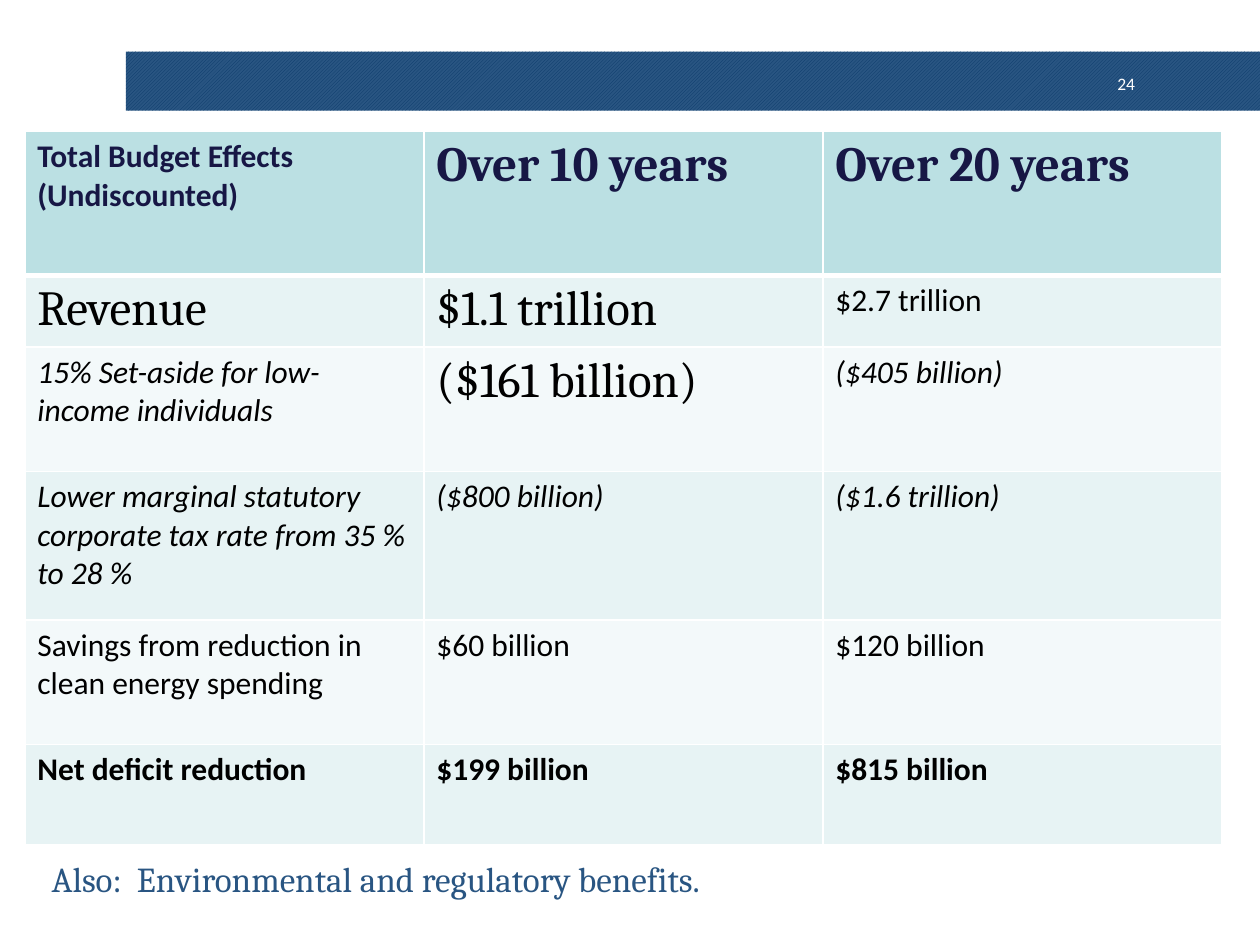
import pptx
import pptx.util
import pptx.dml.color
import pptx.enum.dml
import pptx.enum.shapes
import pptx.enum.text
import pptx.oxml
import pptx.oxml.ns

Cm = pptx.util.Cm
Pt = pptx.util.Pt
RGB = pptx.dml.color.RGBColor
ALIGN = pptx.enum.text.PP_ALIGN

WHITE = RGB(0xFF, 0xFF, 0xFF)
BLACK = RGB(0, 0, 0)
NAVY = RGB(0x17, 0x17, 0x45)
BLUE = RGB(0x29, 0x55, 0x82)
DEEP = RGB(0x08, 0x38, 0x68)
HEAD = RGB(0xBB, 0xE0, 0xE3)
BANDS = [RGB(0xF3, 0xF9, 0xFA), RGB(0xE7, 0xF3, 0xF4)]

ROWS = [
    ("Total Budget Effects (Undiscounted)", "Over 10 years", "Over 20 years"),
    ("Revenue", "$1.1 trillion", "$2.7 trillion"),
    ("15% Set-aside for low-income individuals", "($161 billion)", "($405 billion)"),
    ("Lower marginal statutory corporate tax rate from 35 % to 28 %",
     "($800 billion)", "($1.6 trillion)"),
    ("Savings from reduction in clean energy spending", "$60 billion", "$120 billion"),
    ("Net deficit reduction", "$199 billion", "$815 billion"),
]
HEIGHTS = [2.9, 1.17, 2.51, 3, 2.51, 2.03]
LARGE = {(0, 1), (0, 2), (1, 0), (1, 1), (2, 1)}
BOLD = {0, 5}
ITALIC = {2, 3}
NOTE = "Also:  Environmental and regulatory benefits."
PAGE = "24"


def style(frame, face, size, color, bold=False, italic=False):
    for run in frame.paragraphs[0].runs:
        font = run.font
        font.name, font.size = face, Pt(size)
        font.bold, font.italic = bold, italic
        font.color.rgb = color


def border(cell, widths):
    props = cell._tc.get_or_add_tcPr()
    for spot, (side, width) in enumerate(zip("LRTB", widths)):
        line = pptx.oxml.parse_xml(
            f'<a:ln{side} {pptx.oxml.ns.nsdecls("a")} w="{Pt(width)}">'
            f'<a:solidFill><a:srgbClr val="{WHITE}"/></a:solidFill></a:ln{side}>')
        props.insert(spot, line)


def label(slide, text, place, wrap):
    box = slide.shapes.add_textbox(*[Cm(x) for x in place])
    frame = box.text_frame
    frame.text = text
    frame.word_wrap = wrap
    frame.auto_size = pptx.enum.text.MSO_AUTO_SIZE.SHAPE_TO_FIT_TEXT
    return frame


def banner(slide):
    bar = slide.shapes.add_shape(pptx.enum.shapes.MSO_SHAPE.RECTANGLE,
                                 Cm(2.54), Cm(1.04), Cm(22.86), Cm(1.19))
    bar.shadow.inherit = False
    bar.line.fill.background()
    bar.fill.patterned()
    bar.fill.pattern = pptx.enum.dml.MSO_PATTERN.LIGHT_UPWARD_DIAGONAL
    bar.fill.fore_color.rgb = DEEP
    bar.fill.back_color.rgb = BLUE
    frame = label(slide, PAGE, (22.02, 1.37, 1.04, 0.58), True)
    frame.margin_left = frame.margin_right = Cm(0.18)
    frame.margin_top = frame.margin_bottom = Cm(0.1)
    frame.paragraphs[0].alignment = ALIGN.RIGHT
    style(frame, "Calibri", 10, WHITE)


def budget(slide):
    table = slide.shapes.add_table(len(ROWS), len(ROWS[0]), Cm(0.5), Cm(2.65),
                                   Cm(24.13), Cm(sum(HEIGHTS))).table
    table.first_row = table.horz_banding = False
    for r, (row, height) in enumerate(zip(ROWS, HEIGHTS)):
        table.rows[r].height = Cm(height)
        for c, text in enumerate(row):
            cell = table.cell(r, c)
            cell.text = text
            cell.fill.solid()
            cell.fill.fore_color.rgb = BANDS[r % 2] if r else HEAD
            border(cell, (1, 1, 3 if r == 1 else 1, 1 if r else 3))
            face, size = ("Cambria", 28) if (r, c) in LARGE else ("Calibri", 18)
            slant = r in ITALIC and (r, c) not in LARGE
            style(cell.text_frame, face, size, BLACK if r else NAVY, r in BOLD, slant)


def main():
    deck = pptx.Presentation()
    deck.slide_width, deck.slide_height = Cm(25.4), Cm(19.05)
    slide = deck.slides.add_slide(deck.slide_layouts[6])
    banner(slide)
    budget(slide)
    style(label(slide, NOTE, (0.79, 17.17, 14.86, 1.12), False), "Cambria", 20, BLUE)
    deck.save("out.pptx")


if __name__ == "__main__":
    main()
